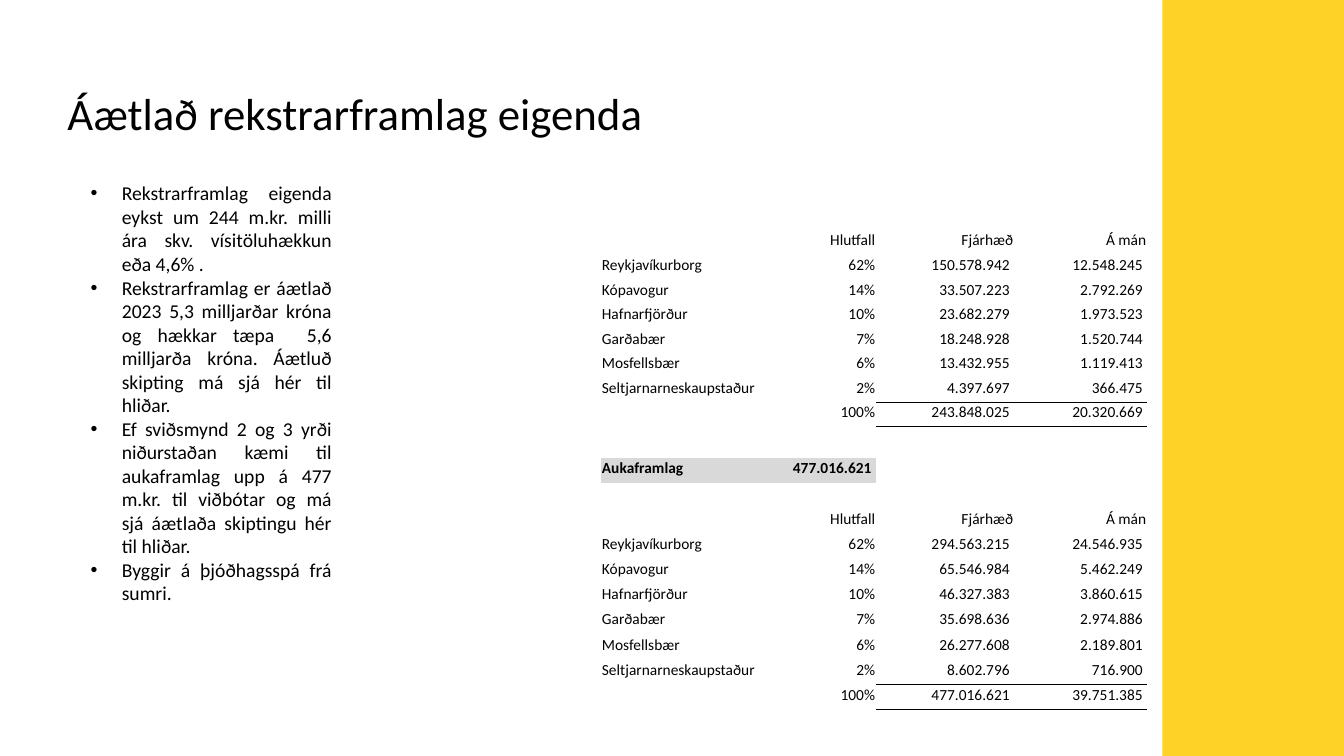
from lxml.etree import SubElement
from pptx import Presentation
from pptx.dml.color import RGBColor
from pptx.enum.shapes import MSO_SHAPE
from pptx.enum.text import MSO_ANCHOR, PP_ALIGN
from pptx.oxml import parse_xml
from pptx.oxml.ns import nsdecls, qn
from pptx.util import Pt

PX = 9144
BLACK = RGBColor(0x00, 0x00, 0x00)
YELLOW = RGBColor(0xFF, 0xD2, 0x28)
GREY = RGBColor(0xD9, 0xD9, 0xD9)
NO_GRID = "{2D5ABB26-0587-4C30-8999-92F81FD0307C}"

TOWNS = [("Reykjavíkurborg", "62%"), ("Kópavogur", "14%"), ("Hafnarfjörður", "10%"),
         ("Garðabær", "7%"), ("Mosfellsbær", "6%"), ("Seltjarnarneskaupstaður", "2%"),
         ("", "100%")]
HEADER = ("", "Hlutfall", "Fjárhæð", "Á mán")
EMPTY = ("", "", "", "")
BASE = [("150.578.942 ", "12.548.245 "), ("33.507.223 ", "2.792.269 "),
        ("23.682.279 ", "1.973.523 "), ("18.248.928 ", "1.520.744 "),
        ("13.432.955 ", "1.119.413 "), ("4.397.697 ", "366.475 "),
        ("243.848.025 ", "20.320.669 ")]
EXTRA = [("294.563.215 ", "24.546.935 "), ("65.546.984 ", "5.462.249 "),
         ("46.327.383 ", "3.860.615 "), ("35.698.636 ", "2.974.886 "),
         ("26.277.608 ", "2.189.801 "), ("8.602.796 ", "716.900 "),
         ("477.016.621 ", "39.751.385 ")]
POINTS = [
    "Rekstrarframlag eigenda eykst um 244 m.kr. milli ára skv. vísitöluhækkun eða 4,6% . ",
    "Rekstrarframlag er áætlað 2023 5,3 milljarðar króna og hækkar tæpa  5,6 milljarða króna. "
    "Áætluð skipting má sjá hér til hliðar.",
    "Ef sviðsmynd 2 og 3 yrði niðurstaðan kæmi til aukaframlag upp á 477 m.kr. til viðbótar "
    "og má sjá áætlaða skiptingu hér til hliðar.",
    "Byggir á þjóðhagsspá frá sumri.",
]


class Deck:
    """Draws styled elements on the current slide."""

    def __init__(self, width, height, font):
        self.prs = Presentation()
        self.prs.slide_width, self.prs.slide_height = width * PX, height * PX
        self.s = self.prs.slides.add_slide(self.prs.slide_layouts[6])
        self.font = font

    def run(self, p, text, size, bold=False):
        r = p.add_run()
        r.text = text
        r.font.name, r.font.size, r.font.bold = self.font, Pt(size), bold
        r.font.color.rgb = BLACK

    def rect(self, x, y, w, h, color):
        sp = self.s.shapes.add_shape(MSO_SHAPE.RECTANGLE, x * PX, y * PX, w * PX, h * PX)
        sp.shadow.inherit = False
        sp.fill.solid()
        sp.fill.fore_color.rgb = color
        sp.line.fill.background()

    def text(self, x, y, w, h, lines, size, bullet=False):
        tf = self.s.shapes.add_textbox(x * PX, y * PX, w * PX, h * PX).text_frame
        tf.word_wrap = True
        for i, line in enumerate(lines):
            p = tf.paragraphs[0] if i == 0 else tf.add_paragraph()
            if bullet:
                p.alignment = PP_ALIGN.JUSTIFY
                pPr = p._p.get_or_add_pPr()
                pPr.set("marL", str(31 * PX))
                pPr.set("indent", str(-31 * PX))
                SubElement(pPr, qn("a:buFont")).set("typeface", "Arial")
                SubElement(pPr, qn("a:buChar")).set("char", "•")
            self.run(p, line, size)

    def border(self, cell, sides):
        for i, side in enumerate(sides):
            cell._tc.get_or_add_tcPr().insert(i, parse_xml(
                f'<a:ln{side} {nsdecls("a")} w="6350"><a:solidFill>'
                f'<a:srgbClr val="{BLACK}"/></a:solidFill></a:ln{side}>'))

    def cell(self, cell, text, size, right, bold):
        cell.vertical_anchor = MSO_ANCHOR.BOTTOM
        cell.margin_left = cell.margin_top = cell.margin_right = PX
        cell.margin_bottom = 5 * PX
        p = cell.text_frame.paragraphs[0]
        if right:
            p.alignment = PP_ALIGN.RIGHT
        if text:
            self.run(p, text, size, bold)
        else:
            p._p.get_or_add_endParaRPr().set("sz", str(size * 100))
        if bold and text:
            cell.fill.solid()
            cell.fill.fore_color.rgb = GREY
        else:
            cell.fill.background()

    def table(self, x, y, widths, row_h, rows, size, bold_row=None):
        frame = self.s.shapes.add_table(len(rows), len(widths), x * PX, y * PX,
                                        sum(widths) * PX, len(rows) * row_h * PX)
        table = frame.table
        table.first_row = table.horz_banding = False
        table._tbl.tblPr.find(qn("a:tableStyleId")).text = NO_GRID
        for column, w in zip(table.columns, widths):
            column.width = w * PX
        for i, row in enumerate(rows):
            table.rows[i].height = row_h * PX
            for j, text in enumerate(row):
                self.cell(table.cell(i, j), text, size, j > 0, i == bold_row)
        last = len(rows) - 1
        for j in (2, 3):
            self.border(table.cell(last - 1, j), "B")
            self.border(table.cell(last, j), "TB")


def main():
    deck = Deck(1333, 750, "Calibri")
    deck.rect(1153, 0, 180, 750, YELLOW)
    widths = (168, 105, 137, 132)
    base, extra = ([HEADER] + [town + sums for town, sums in zip(TOWNS, amounts)]
                   for amounts in (BASE, EXTRA))
    total = ("Aukaframlag", "477.016.621 ", "", "")
    deck.table(596, 454, widths, 25, [total, EMPTY] + extra, 11, bold_row=0)
    deck.text(57, 80, 609, 94, ["Áætlað rekstrarframlag eigenda"], 32)
    deck.table(596, 204, widths, 24, [EMPTY] + base, 11)
    deck.text(80, 175, 259, 434, POINTS, 14, bullet=True)
    deck.prs.save("out.pptx")


if __name__ == "__main__":
    main()
